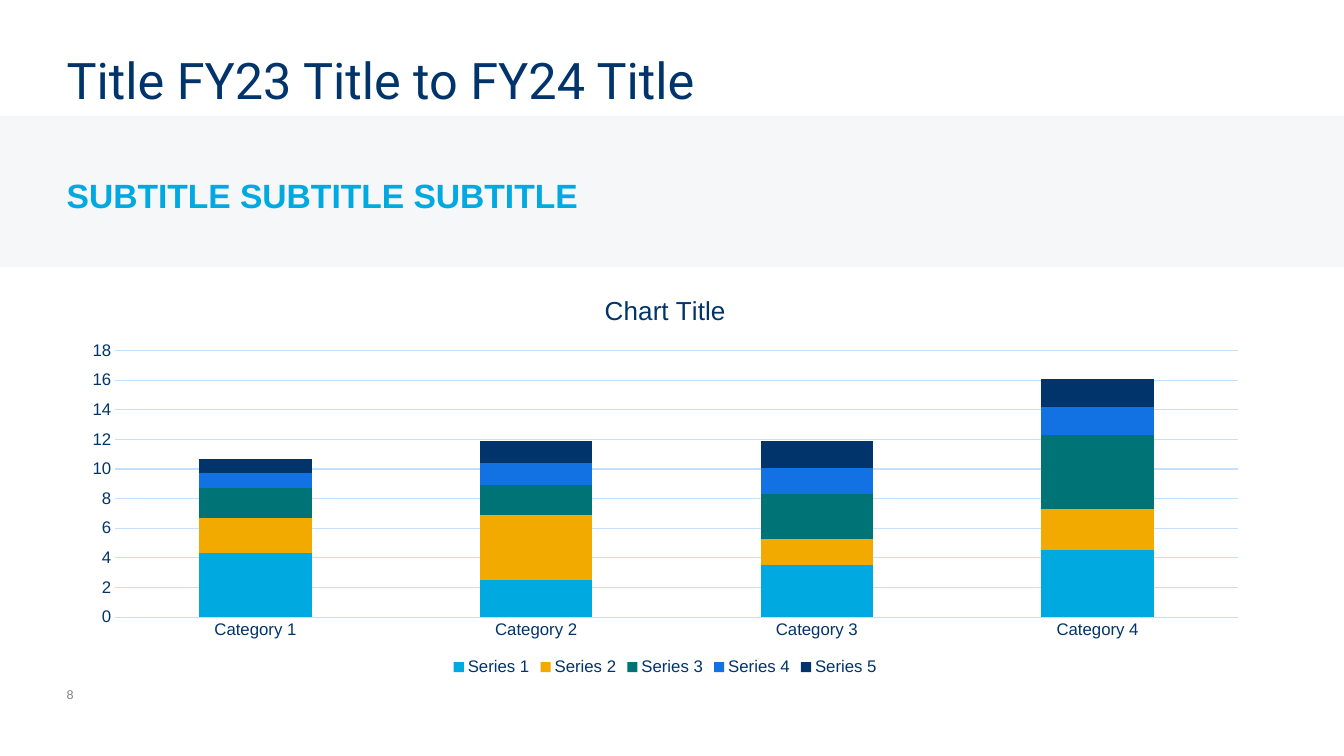
"""Build a slide with a title, a subtitle band and a stacked column chart."""
from lxml import etree
from pptx import Presentation
from pptx.chart.data import CategoryChartData
from pptx.dml.color import RGBColor
from pptx.enum.chart import XL_CHART_TYPE, XL_LEGEND_POSITION, XL_TICK_MARK
from pptx.enum.shapes import MSO_SHAPE
from pptx.enum.text import MSO_ANCHOR, MSO_AUTO_SIZE, PP_ALIGN
from pptx.util import Cm, Pt

STACKED = XL_CHART_TYPE.COLUMN_STACKED
BOTTOM = XL_LEGEND_POSITION.BOTTOM
NO_TICK = XL_TICK_MARK.NONE
RECT = MSO_SHAPE.RECTANGLE
MIDDLE = MSO_ANCHOR.MIDDLE
NO_FIT = MSO_AUTO_SIZE.NONE
LEFT = PP_ALIGN.LEFT

NAVY, SKY, PALE, BAND, GREY = "00346B", "00A9E0", "C3E0FF", "F5F7F9", "808080"
SLIDE_W, SLIDE_H = 33.87, 19.05
MARGIN, CONTENT_W = 1.68, 30.07

TITLE = "Title FY23 Title to FY24 Title"
SUBTITLE = "SUBTITLE SUBTITLE SUBTITLE"
PAGE = "8"
CHART_TITLE = "Chart Title"
CATEGORIES = ["Category 1", "Category 2", "Category 3", "Category 4"]
SERIES = [
    ("Series 1", SKY, (4.3, 2.5, 3.5, 4.5)),
    ("Series 2", "F2A900", (2.4, 4.4, 1.8, 2.8)),
    ("Series 3", "007377", (2, 2, 3, 5)),
    ("Series 4", "1271E3", (1, 1.5, 1.8, 1.9)),
    ("Series 5", NAVY, (1, 1.5, 1.8, 1.9)),
]


def rgb(color):
    return RGBColor.from_string(color)


def set_font(font, size, color, name="Arial", bold=False):
    font.size, font.name, font.bold = Pt(size), name, bold
    font.color.rgb = rgb(color)


def set_line(line):
    line.color.rgb = rgb(PALE)
    line.width = Pt(0.75)


def write(sp, text, size, color, name="Arial", bold=False, spacing=1.0):
    tf = sp.text_frame
    tf.word_wrap, tf.auto_size, tf.vertical_anchor = True, NO_FIT, MIDDLE
    tf.margin_left = tf.margin_top = tf.margin_right = tf.margin_bottom = 0
    p = tf.paragraphs[0]
    p.alignment, p.line_spacing = LEFT, spacing
    r = p.add_run()
    r.text = text
    set_font(r.font, size, color, name, bold)


def add_chart(s):
    data = CategoryChartData()
    data.categories = CATEGORIES
    for name, _, values in SERIES:
        data.add_series(name, values)
    chart = s.shapes.add_chart(STACKED, Cm(1.73), Cm(6.93), Cm(CONTENT_W),
                               Cm(10.21), data).chart
    set_font(chart.font, 10, NAVY)

    chart.has_title = True
    r = chart.chart_title.text_frame.paragraphs[0].add_run()
    r.text = CHART_TITLE
    set_font(r.font, 18.6, NAVY)
    chart.chart_title.include_in_layout = False

    chart.has_legend = True
    chart.legend.position = BOTTOM
    chart.legend.include_in_layout = False
    set_font(chart.legend.font, 12, NAVY)

    for axis in (chart.category_axis, chart.value_axis):
        axis.major_tick_mark = axis.minor_tick_mark = NO_TICK
        set_font(axis.tick_labels.font, 12, NAVY)
    set_line(chart.category_axis.format.line)
    axis = chart.value_axis
    axis.minimum_scale, axis.maximum_scale, axis.major_unit = 0, 18, 2
    axis.format.line.fill.background()
    set_line(axis.major_gridlines.format.line)

    plot = chart.plots[0]
    plot.gap_width, plot.overlap, plot.vary_by_categories = 150, 100, False
    for series, (_, color, _) in zip(plot.series, SERIES):
        series.format.fill.solid()
        series.format.fill.fore_color.rgb = rgb(color)


def main():
    prs = Presentation()
    prs.slide_width, prs.slide_height = Cm(SLIDE_W), Cm(SLIDE_H)
    s = prs.slides.add_slide(prs.slide_layouts[5])

    band = s.shapes.add_shape(RECT, 0, Cm(2.92), Cm(SLIDE_W), Cm(3.81))
    band.shadow.inherit = False
    band.fill.solid()
    band.fill.fore_color.rgb = rgb(BAND)
    band.line.fill.background()
    tree = band.element.getparent()
    tree.remove(band.element)
    tree.insert(2, band.element)

    title = s.shapes.title
    title.left, title.top = Cm(MARGIN), Cm(1.3)
    title.width, title.height = Cm(CONTENT_W), Cm(1.42)
    write(title, TITLE, 36, NAVY, "Roboto")

    subtitle = s.shapes.add_textbox(Cm(MARGIN), Cm(3.76), Cm(CONTENT_W), Cm(2.11))
    write(subtitle, SUBTITLE, 24, SKY, bold=True, spacing=1.2)

    add_chart(s)

    page = s.shapes.add_textbox(Cm(MARGIN), Cm(17.22), Cm(7.62), Cm(0.58))
    write(page, PAGE, 9, GREY)
    prs.save("out.pptx")


if __name__ == "__main__":
    main()
